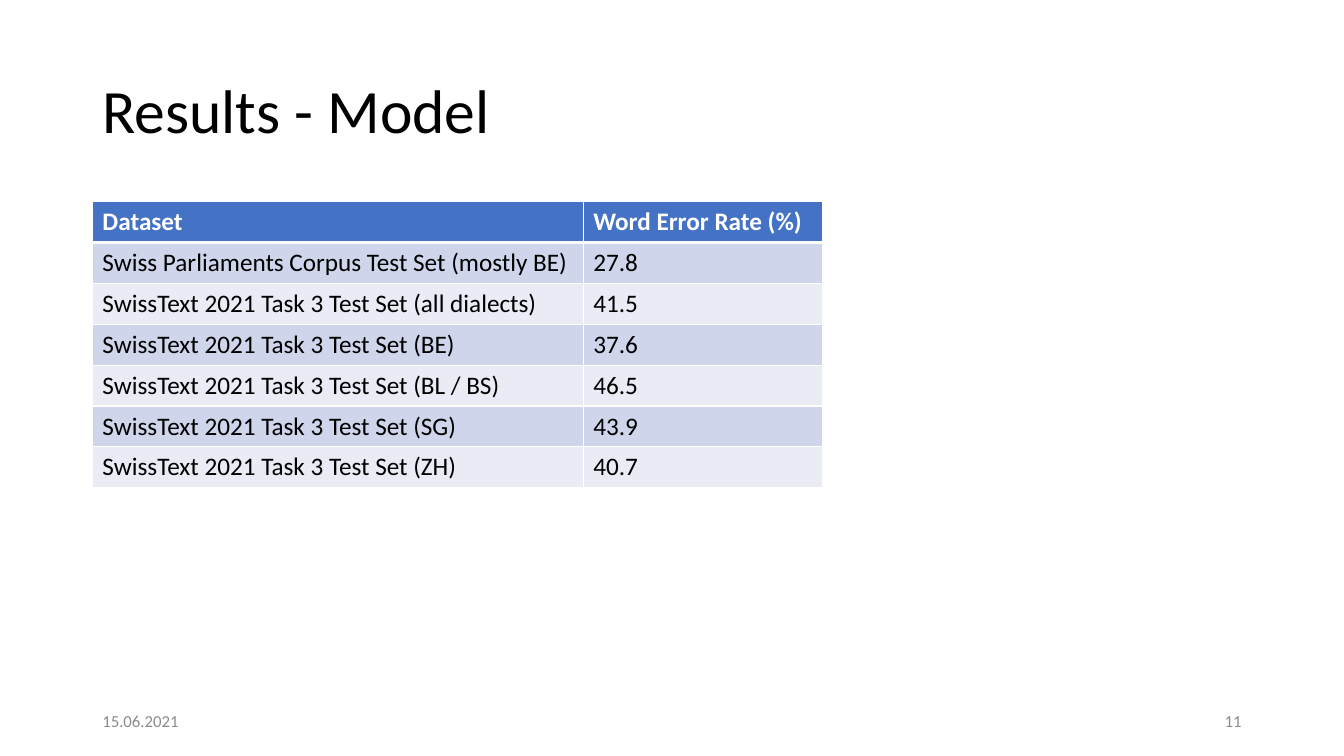
from dataclasses import dataclass

from lxml import etree
from pptx import Presentation
from pptx.dml.color import RGBColor
from pptx.enum.text import MSO_ANCHOR, PP_ALIGN
from pptx.oxml.ns import qn
from pptx.slide import Slide
from pptx.table import _Cell
from pptx.text.text import TextFrame
from pptx.util import Pt

MIDDLE = MSO_ANCHOR.MIDDLE
LEFT = PP_ALIGN.LEFT
RIGHT = PP_ALIGN.RIGHT

FONT = "Calibri"
BLACK = "000000"
WHITE = "FFFFFF"
GRAY = "8C8C8C"
HEADER_FILL = "4472C4"
BAND_FILLS = ("CFD5EA", "E9EBF5")

MARGIN = 66
COLUMN_WIDTHS = (350.64, 170.64)
ROW_HEIGHT = 29.2
THIN, THICK = 1, 3


@dataclass(frozen=True)
class Result:
    dataset: str
    error_rate: str


@dataclass(frozen=True)
class FooterItem:
    text: str
    left: float
    alignment: PP_ALIGN


HEADER = Result("Dataset", "Word Error Rate (%)")
RESULTS = (
    Result("Swiss Parliaments Corpus Test Set (mostly BE)", "27.8"),
    Result("SwissText 2021 Task 3 Test Set (all dialects)", "41.5"),
    Result("SwissText 2021 Task 3 Test Set (BE)", "37.6"),
    Result("SwissText 2021 Task 3 Test Set (BL / BS)", "46.5"),
    Result("SwissText 2021 Task 3 Test Set (SG)", "43.9"),
    Result("SwissText 2021 Task 3 Test Set (ZH)", "40.7"),
)
FOOTER_ITEMS = (
    FooterItem("15.06.2021", MARGIN, LEFT),
    FooterItem("11", 678, RIGHT),
)


def color(value: str) -> RGBColor:
    return RGBColor.from_string(value)


def write_text(
    frame: TextFrame,
    text: str,
    size: float,
    text_color: str,
    bold: bool = False,
    alignment: PP_ALIGN = LEFT,
) -> None:
    frame.text = text
    paragraph = frame.paragraphs[0]
    paragraph.alignment = alignment
    for run in paragraph.runs:
        run.font.name = FONT
        run.font.size = Pt(size)
        run.font.bold = bold
        run.font.color.rgb = color(text_color)


def set_borders(cell: _Cell, top: float, bottom: float) -> None:
    properties = cell._tc.get_or_add_tcPr()
    widths = {"a:lnL": THIN, "a:lnR": THIN, "a:lnT": top, "a:lnB": bottom}
    for position, (tag, width) in enumerate(widths.items()):
        line = etree.Element(qn(tag), w=str(Pt(width)))
        fill = etree.SubElement(line, qn("a:solidFill"))
        etree.SubElement(fill, qn("a:srgbClr"), val=WHITE)
        properties.insert(position, line)


def add_title(slide: Slide, text: str) -> None:
    title = slide.shapes.title
    title.left, title.top = Pt(MARGIN), Pt(28.8)
    title.width, title.height = Pt(828), Pt(104.4)
    frame = title.text_frame
    frame.vertical_anchor = MIDDLE
    write_text(frame, text, 44, BLACK)
    frame.paragraphs[0].line_spacing = 0.9


def add_results_table(slide: Slide) -> None:
    rows = (HEADER, *RESULTS)
    table = slide.shapes.add_table(
        len(rows),
        len(COLUMN_WIDTHS),
        Pt(MARGIN),
        Pt(144),
        Pt(sum(COLUMN_WIDTHS)),
        Pt(ROW_HEIGHT * len(rows)),
    ).table
    for column, width in zip(table.columns, COLUMN_WIDTHS):
        column.width = Pt(width)
    for row_index, result in enumerate(rows):
        table.rows[row_index].height = Pt(ROW_HEIGHT)
        is_header = row_index == 0
        fill = HEADER_FILL if is_header else BAND_FILLS[(row_index - 1) % 2]
        text_color = WHITE if is_header else BLACK
        top = THICK if row_index == 1 else THIN
        bottom = THICK if is_header else THIN
        for column_index, text in enumerate((result.dataset, result.error_rate)):
            cell = table.cell(row_index, column_index)
            write_text(cell.text_frame, text, 18, text_color, is_header)
            cell.fill.solid()
            cell.fill.fore_color.rgb = color(fill)
            set_borders(cell, top, bottom)


def add_footer_item(slide: Slide, item: FooterItem) -> None:
    shape = slide.shapes.add_textbox(Pt(item.left), Pt(500.4), Pt(216), Pt(28.8))
    frame = shape.text_frame
    frame.word_wrap = True
    frame.vertical_anchor = MIDDLE
    write_text(frame, item.text, 12, GRAY, alignment=item.alignment)


def main() -> None:
    presentation = Presentation()
    presentation.slide_width = Pt(960)
    presentation.slide_height = Pt(540)
    slide = presentation.slides.add_slide(presentation.slide_layouts[5])
    add_title(slide, "Results - Model")
    add_results_table(slide)
    for item in FOOTER_ITEMS:
        add_footer_item(slide, item)
    presentation.save("out.pptx")


if __name__ == "__main__":
    main()
